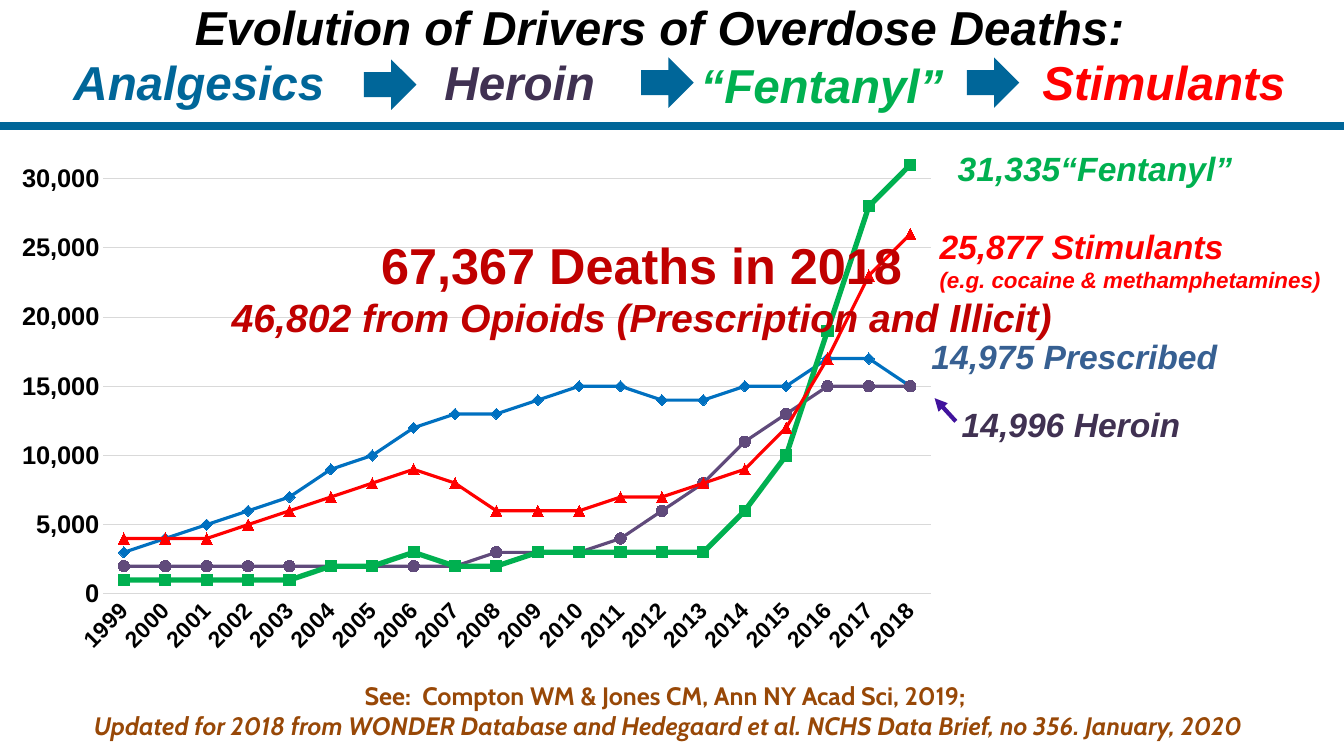
"""Build a slide on the drivers of overdose deaths, 1999 to 2018."""
import pptx
import pptx.chart.data
import pptx.dml.color
import pptx.enum.chart
import pptx.enum.shapes
import pptx.enum.text
import pptx.oxml
import pptx.util
import lxml.etree

Inches = pptx.util.Inches
Pt = pptx.util.Pt
Shape = pptx.enum.shapes.MSO_SHAPE
Align = pptx.enum.text.PP_ALIGN
Mark = pptx.enum.chart.XL_MARKER_STYLE

THEME = {
    "font": "Arial", "note_font": "Cabin",
    "black": "000000", "white": "FFFFFF", "teal": "006699", "blue": "0070C0",
    "steel": "376092", "plum": "604A7B", "dark": "403152", "green": "00B050",
    "red": "FF0000", "brick": "C00000", "brown": "984807", "grid": "D9D9D9",
    "violet": "41139D",
    "head": 34, "total": 36, "sub": 28, "label": 24, "gap": 32, "note": 18,
    "small": 16, "years": 16.2, "scale": 18.2,
}

YEARS = [str(year) for year in range(1999, 2019)]
LINES = [
    ("Prescribed", "blue", 2.28, Mark.DIAMOND,
     [3000, 4000, 5000, 6000, 7000, 9000, 10000, 12000, 13000, 13000,
      14000, 15000, 15000, 14000, 14000, 15000, 15000, 17000, 17000, 15000]),
    ("Heroin", "plum", 2.28, Mark.CIRCLE,
     [2000, 2000, 2000, 2000, 2000, 2000, 2000, 2000, 2000, 3000,
      3000, 3000, 4000, 6000, 8000, 11000, 13000, 15000, 15000, 15000]),
    ("“Fentanyl”", "green", 3.75, Mark.SQUARE,
     [1000, 1000, 1000, 1000, 1000, 2000, 2000, 3000, 2000, 2000,
      3000, 3000, 3000, 3000, 3000, 6000, 10000, 19000, 28000, 31000]),
    ("Stimulants", "red", 2.28, Mark.TRIANGLE,
     [4000, 4000, 4000, 5000, 6000, 7000, 8000, 9000, 8000, 6000,
      6000, 6000, 7000, 7000, 8000, 9000, 12000, 17000, 23000, 26000]),
]
PLOT = {"x": 0.069, "y": 0.017, "w": 0.714, "h": 0.586}

TITLE = "Evolution of Drivers of Overdose Deaths:"
DRIVERS = [
    ("Analgesics", "teal", (0.63, 0.48, 2.72, 0.67)),
    ("Heroin", "dark", (4.31, 0.48, 1.71, 0.67)),
    ("“Fentanyl”", "green", (6.85, 0.51, 2.63, 0.67)),
    ("Stimulants", "red", (10.24, 0.48, 2.64, 0.67)),
]
ARROWS = [(3.61, 0.59), (6.36, 0.57), (9.59, 0.57)]
LABELS = [
    ("14,975 Prescribed", "steel", (9.14, 3.28, 3.55, 0.5)),
    ("31,335“Fentanyl”", "green", (9.4, 1.42, 3.39, 0.5)),
    ("14,996 Heroin", "dark", (9.44, 3.96, 2.93, 0.5)),
]
STIMS = [
    [("25,877 Stimulants", {}), (" ", {"size": "gap"})],
    [("(e.g. cocaine & methamphetamines)", {"size": "small"})],
]
SOURCE = [
    [("See:  Compton WM & Jones CM, Ann NY Acad Sci, 2019; ", {"slant": False})],
    [("Updated for 2018 from WONDER Database and Hedegaard et al. "
      "NCHS Data Brief, no 356. January, 2020", {})],
]


def tint(name):
    return pptx.dml.color.RGBColor.from_string(THEME[name])


def style(font, size="label", color="black", face="font", slant=True):
    font.name = THEME[face]
    font.size = Pt(THEME[size])
    font.bold = True
    font.italic = slant
    font.color.rgb = tint(color)


def write(slide, box, text, align=Align.LEFT, space=None, wrap=True, fill=None, **form):
    """Place text, given as a string or as lines of (words, format) runs."""
    area = [Inches(side) for side in box]
    if fill:
        shape = block(slide, Shape.RECTANGLE, box, fill)
    else:
        shape = slide.shapes.add_textbox(*area)
    frame = shape.text_frame
    frame.word_wrap = wrap
    frame.vertical_anchor = pptx.enum.text.MSO_ANCHOR.TOP
    rows = [[(text, {})]] if isinstance(text, str) else text
    for place, row in enumerate(rows):
        para = frame.add_paragraph() if place else frame.paragraphs[0]
        para.alignment = align
        if space:
            para.line_spacing = space
        for words, extra in row:
            run = para.add_run()
            run.text = words
            style(run.font, **{**form, **extra})


def block(slide, kind, box, fill):
    shape = slide.shapes.add_shape(kind, *[Inches(side) for side in box])
    shape.shadow.inherit = False
    shape.fill.solid()
    shape.fill.fore_color.rgb = tint(fill)
    shape.line.fill.background()
    return shape


def rule(slide, ends, color, width, head=False):
    line = slide.shapes.add_connector(
        pptx.enum.shapes.MSO_CONNECTOR.STRAIGHT, *[Inches(end) for end in ends])
    line.line.color.rgb = tint(color)
    line.line.width = Pt(width)
    if head:
        tip = lxml.etree.SubElement(
            line.line._get_or_add_ln(), pptx.oxml.ns.qn("a:headEnd"))
        tip.set("type", "triangle")
    lxml.etree.SubElement(line._element.spPr, pptx.oxml.ns.qn("a:effectLst"))


def graph(slide, box):
    data = pptx.chart.data.CategoryChartData(number_format="#,##0")
    data.categories = YEARS
    for name, color, width, mark, counts in LINES:
        data.add_series(name, counts)
    chart = slide.shapes.add_chart(
        pptx.enum.chart.XL_CHART_TYPE.LINE_MARKERS,
        *[Inches(side) for side in box], data).chart
    chart.has_legend = chart.has_title = False
    style(chart.font, "small", slant=False)

    for series, (name, color, width, mark, counts) in zip(chart.plots[0].series, LINES):
        series.smooth = False
        series.format.line.color.rgb = tint(color)
        series.format.line.width = Pt(width)
        series.marker.style = mark
        series.marker.size = 8
        series.marker.format.fill.solid()
        series.marker.format.fill.fore_color.rgb = tint(color)
        series.marker.format.line.color.rgb = tint(color)
    chart.plots[0].vary_by_categories = False

    years, scale = chart.category_axis, chart.value_axis
    for axis, size in ((years, "years"), (scale, "scale")):
        axis.major_tick_mark = axis.minor_tick_mark = pptx.enum.chart.XL_TICK_MARK.NONE
        style(axis.tick_labels.font, size, slant=False)
    scale.minimum_scale, scale.maximum_scale, scale.major_unit = 0, 32000, 5000
    scale.tick_labels.number_format = "#,##0"
    scale.tick_labels.number_format_is_linked = False
    scale.format.line.fill.background()
    for line in (years.format.line, scale.major_gridlines.format.line):
        line.color.rgb = tint("grid")
        line.width = Pt(0.75)

    qn = pptx.oxml.ns.qn
    years._element.find(qn("c:txPr")).find(qn("a:bodyPr")).set("rot", "-2700000")
    area = chart._chartSpace.chart.plotArea
    for old in area.findall(qn("c:layout")):
        area.remove(old)
    layout = lxml.etree.Element(qn("c:layout"))
    manual = lxml.etree.SubElement(layout, qn("c:manualLayout"))
    parts = {"layoutTarget": "inner", "xMode": "edge", "yMode": "edge", **PLOT}
    for tag, value in parts.items():
        lxml.etree.SubElement(manual, qn("c:" + tag)).set("val", str(value))
    area.insert(0, layout)


def main():
    deck = pptx.Presentation()
    deck.slide_width, deck.slide_height = Inches(13.33), Inches(7.5)
    slide = deck.slides.add_slide(deck.slide_layouts[6])
    mid = Align.CENTER

    write(slide, (0.63, -0.01, 11.83, 0.62), TITLE, mid, 0.9, fill="white", size="head")
    graph(slide, (0.22, 1.37, 11.51, 7.5))
    for text, color, box in LABELS:
        write(slide, box, text, color=color)
    rule(slide, (9.27, 3.95, 9.48, 4.18), "violet", 3, head=True)
    rule(slide, (0, 1.25, 13.33, 1.25), "teal", 6)
    write(slide, (0.39, 6.7, 12.47, 0.71), SOURCE, mid,
          size="note", color="brown", face="note_font")
    write(slide, (9.22, 2.14, 6.67, 0.86), STIMS, space=0.9, color="red")
    write(slide, (3.48, 2.27, 5.77, 0.71), "67,367 Deaths in 2018", mid,
          size="total", color="brick", slant=False)
    write(slide, (2.15, 2.86, 8.43, 0.57),
          "46,802 from Opioids (Prescription and Illicit)", mid,
          size="sub", color="brick")
    for left, top in ARROWS:
        block(slide, Shape.RIGHT_ARROW, (left, top, 0.52, 0.5), "teal")
    for text, color, box in DRIVERS:
        write(slide, box, text, wrap=False, size="head", color=color)
    deck.save("out.pptx")


if __name__ == "__main__":
    main()
